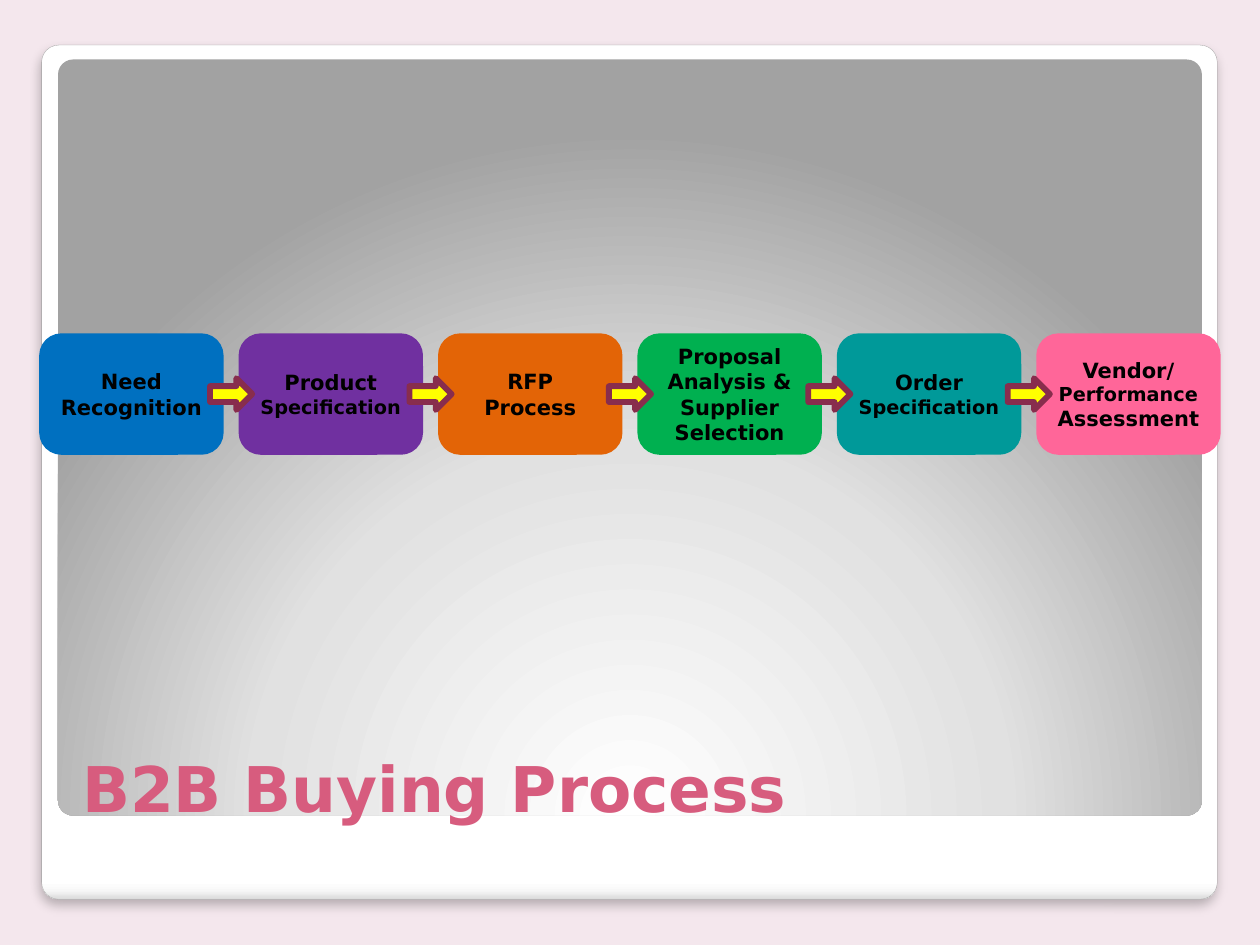
"""Build a slide showing the six steps of the B2B buying process."""
import pptx
import pptx.dml.color
import pptx.enum.shapes
import pptx.enum.text
import pptx.oxml
import pptx.oxml.ns
import pptx.util
from dataclasses import dataclass

Cm = pptx.util.Cm
Pt = pptx.util.Pt
SHAPE = pptx.enum.shapes.MSO_SHAPE
ANCHOR = pptx.enum.text.MSO_ANCHOR
ALIGN = pptx.enum.text.PP_ALIGN
NAMESPACE = pptx.oxml.ns.nsdecls("a")


@dataclass(frozen=True)
class Theme:
    font: str = "DejaVu Sans"
    background: str = "F4E7ED"
    title: str = "D75C7E"
    text: str = "000000"
    frame_line: str = "A4A4A4"
    arrow: str = "FFFF00"
    arrow_line: str = "882D4D"
    title_size: float = 36
    step_size: float = 12
    small_size: float = 11
    outline: float = 3.35
    frame_outline: float = 0.16


THEME = Theme()
TITLE = "B2B Buying Process"
SMALL_WORDS = ("Specification", "Performance ")
STEPS = [
    (["Need Recognition"], "0070C0"),
    (["Product ", "Specification"], "7030A0"),
    (["RFP Process"], "E36406"),
    (["Proposal Analysis & Supplier Selection"], "00B050"),
    (["Order ", "Specification"], "009999"),
    (["Vendor/ ", "Performance ", "Assessment"], "FF6699"),
]
FRAME_STOPS = [(0, "FFFFFF"), (98, "FFFFFF"), (99, "F7F7F7"), (100, "DADADA")]
PANEL_STOPS = [(0, "FFFFFF"), (55, "E1E1E1"), (100, "A2A2A2")]
FRAME_DIRECTION = '<a:lin ang="5400000" scaled="0"/>'
PANEL_DIRECTION = (
    '<a:path path="circle">'
    '<a:fillToRect l="50000" t="175000" r="50000" b="-75000"/></a:path>'
)
FRAME_SHADOW = (
    f'<a:outerShdw {NAMESPACE} blurRad="{Pt(6)}" dist="{Pt(4)}" dir="5400000" '
    'algn="t" rotWithShape="0">'
    '<a:srgbClr val="000000"><a:alpha val="25000"/></a:srgbClr></a:outerShdw>'
)
STEP_LEFT, STEP_TOP, STEP_WIDTH, STEP_HEIGHT = 0.85, 6.78, 3.6, 2.33
STEP_PITCH = 4.02
ARROW_WIDTH, ARROW_HEIGHT = 0.85, 0.64


def rgb(color):
    return pptx.dml.color.RGBColor.from_string(color)


def add_box(slide, kind, left, top, width, height, fill=None, line=None, weight=THEME.outline):
    box = slide.shapes.add_shape(kind, Cm(left), Cm(top), Cm(width), Cm(height))
    box.shadow.inherit = False
    if fill:
        box.fill.solid()
        box.fill.fore_color.rgb = rgb(fill)
    if line:
        box.line.color.rgb = rgb(line)
        box.line.width = Pt(weight)
    else:
        box.line.fill.background()
    return box


def set_gradient(box, stops, direction):
    stop_xml = "".join(
        f'<a:gs pos="{position * 1000}"><a:srgbClr val="{color}"/></a:gs>'
        for position, color in stops
    )
    gradient = pptx.oxml.parse_xml(
        f'<a:gradFill {NAMESPACE} rotWithShape="1">'
        f"<a:gsLst>{stop_xml}</a:gsLst>{direction}</a:gradFill>"
    )
    box.fill.background()
    properties = box._element.spPr
    properties.replace(properties.find(pptx.oxml.ns.qn("a:noFill")), gradient)


def format_run(run, size, color):
    run.font.name = THEME.font
    run.font.size = Pt(size)
    run.font.bold = True
    run.font.color.rgb = rgb(color)


def add_backdrop(slide):
    slide.background.fill.solid()
    slide.background.fill.fore_color.rgb = rgb(THEME.background)
    frame = add_box(slide, SHAPE.ROUNDED_RECTANGLE, 0.84, 0.91, 23.7, 17.22,
                    line=THEME.frame_line, weight=THEME.frame_outline)
    set_gradient(frame, FRAME_STOPS, FRAME_DIRECTION)
    effects = frame._element.spPr.find(pptx.oxml.ns.qn("a:effectLst"))
    effects.append(pptx.oxml.parse_xml(FRAME_SHADOW))
    panel = add_box(slide, SHAPE.ROUNDED_RECTANGLE, 1.17, 1.2, 23.06, 15.24)
    set_gradient(panel, PANEL_STOPS, PANEL_DIRECTION)
    for part in (frame, panel):
        part.adjustments[0] = 0.02


def place_title(slide):
    title = slide.shapes.title
    slide.shapes._spTree.append(title._element)
    title.left, title.top, title.width, title.height = Cm(1.4), Cm(13.84), Cm(22.73), Cm(2.92)
    frame = title.text_frame
    frame.text = TITLE
    frame.word_wrap = True
    frame.auto_size = pptx.enum.text.MSO_AUTO_SIZE.NONE
    frame.vertical_anchor = ANCHOR.BOTTOM
    frame.paragraphs[0].alignment = ALIGN.LEFT
    format_run(frame.paragraphs[0].runs[0], THEME.title_size, THEME.title)


def add_step(slide, index, words, color):
    step = add_box(slide, SHAPE.ROUNDED_RECTANGLE, STEP_LEFT + index * STEP_PITCH,
                   STEP_TOP, STEP_WIDTH, STEP_HEIGHT, color, color)
    step.text_frame.word_wrap = True
    step.text_frame.vertical_anchor = ANCHOR.MIDDLE
    label = step.text_frame.paragraphs[0]
    label.alignment = ALIGN.CENTER
    for word in words:
        run = label.add_run()
        run.text = word
        size = THEME.small_size if word in SMALL_WORDS else THEME.step_size
        format_run(run, size, THEME.text)


def add_arrow(slide, index):
    gap_center = STEP_LEFT + index * STEP_PITCH + (STEP_WIDTH + STEP_PITCH) / 2
    top = STEP_TOP + (STEP_HEIGHT - ARROW_HEIGHT) / 2
    add_box(slide, SHAPE.RIGHT_ARROW, gap_center - ARROW_WIDTH / 2, top,
            ARROW_WIDTH, ARROW_HEIGHT, THEME.arrow, THEME.arrow_line)


def main():
    deck = pptx.Presentation()
    deck.slide_width, deck.slide_height = Cm(25.4), Cm(19.05)
    slide = deck.slides.add_slide(deck.slide_layouts[5])
    add_backdrop(slide)
    place_title(slide)
    for index, (words, color) in enumerate(STEPS):
        add_step(slide, index, words, color)
    for index in range(len(STEPS) - 1):
        add_arrow(slide, index)
    deck.save("out.pptx")


if __name__ == "__main__":
    main()
